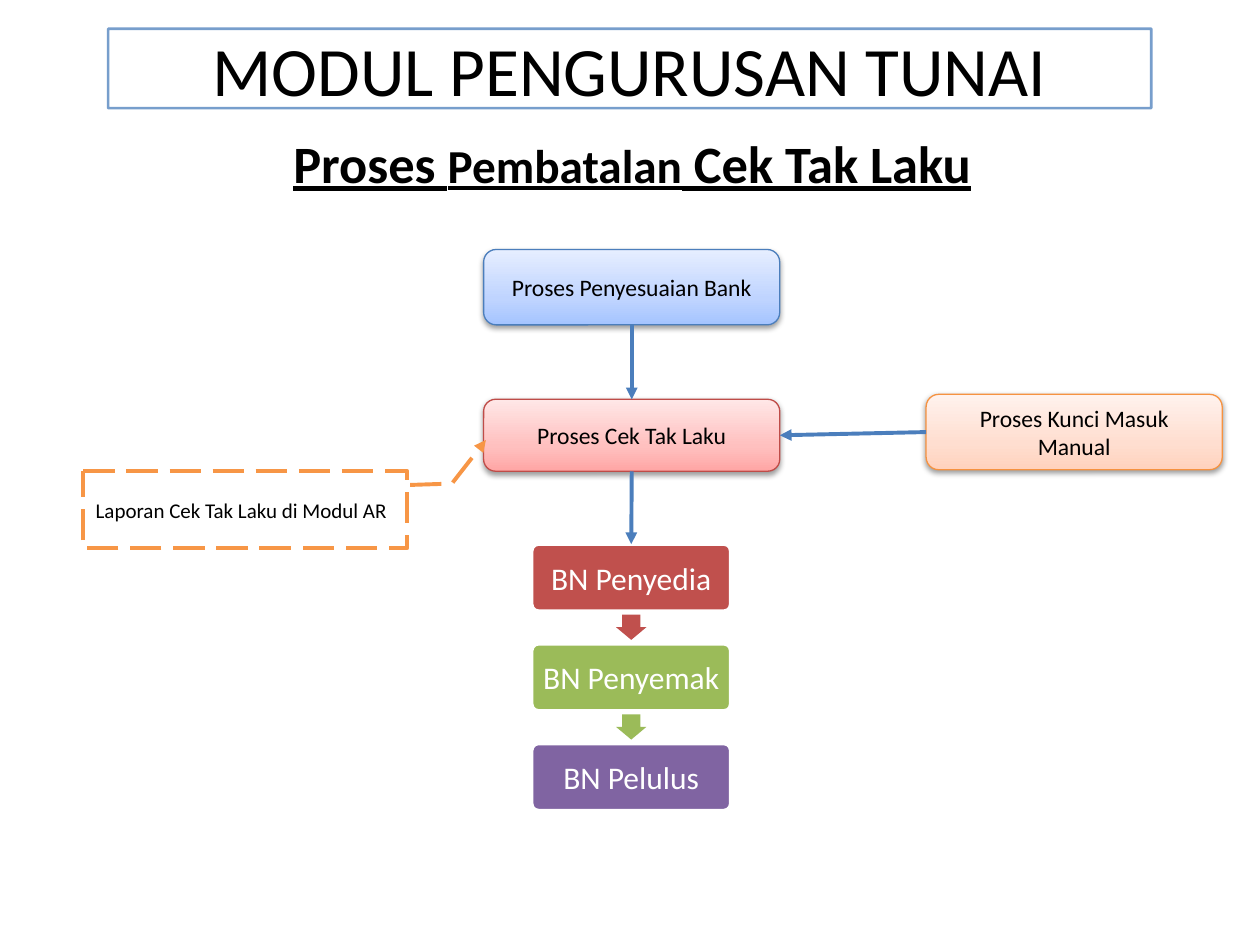
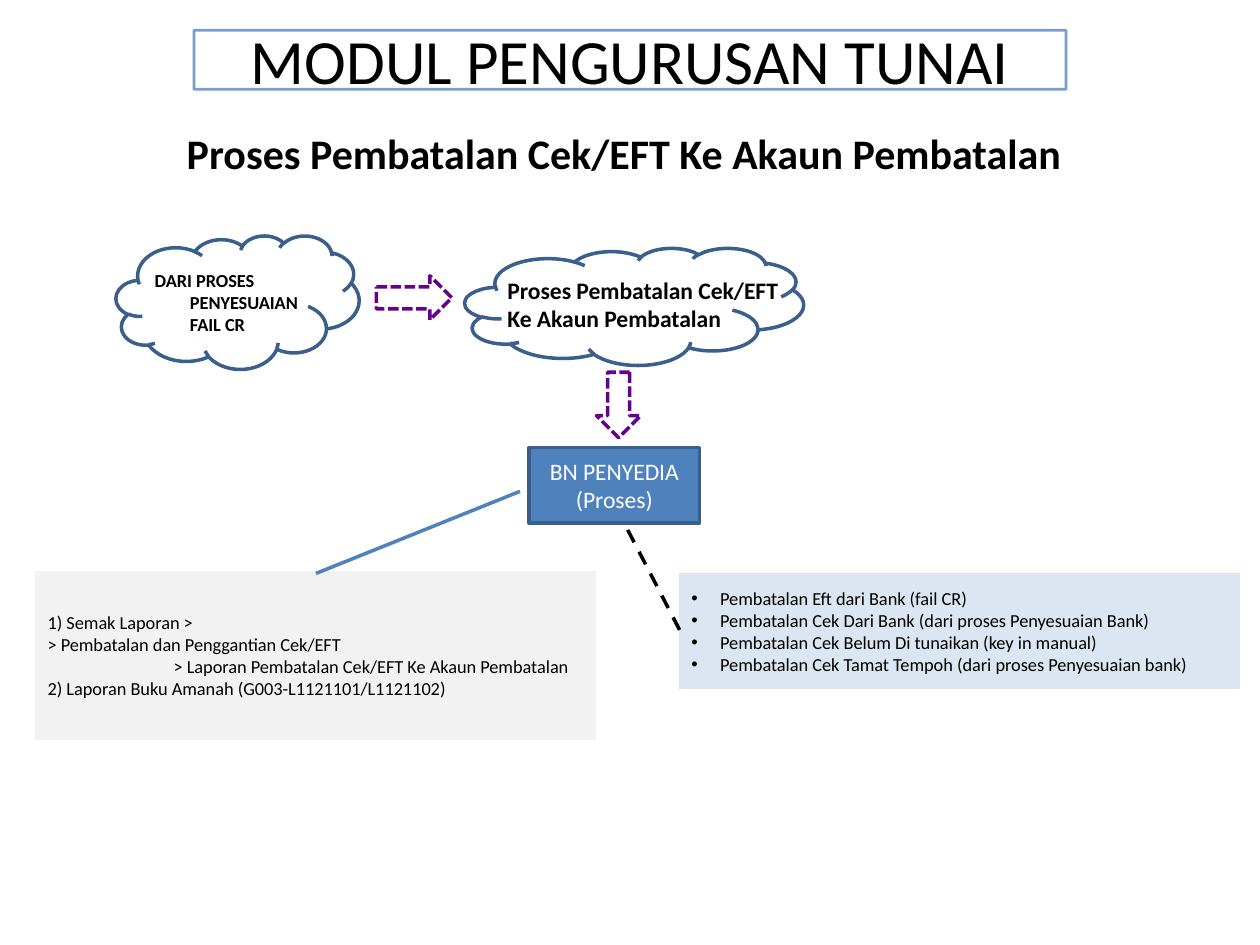
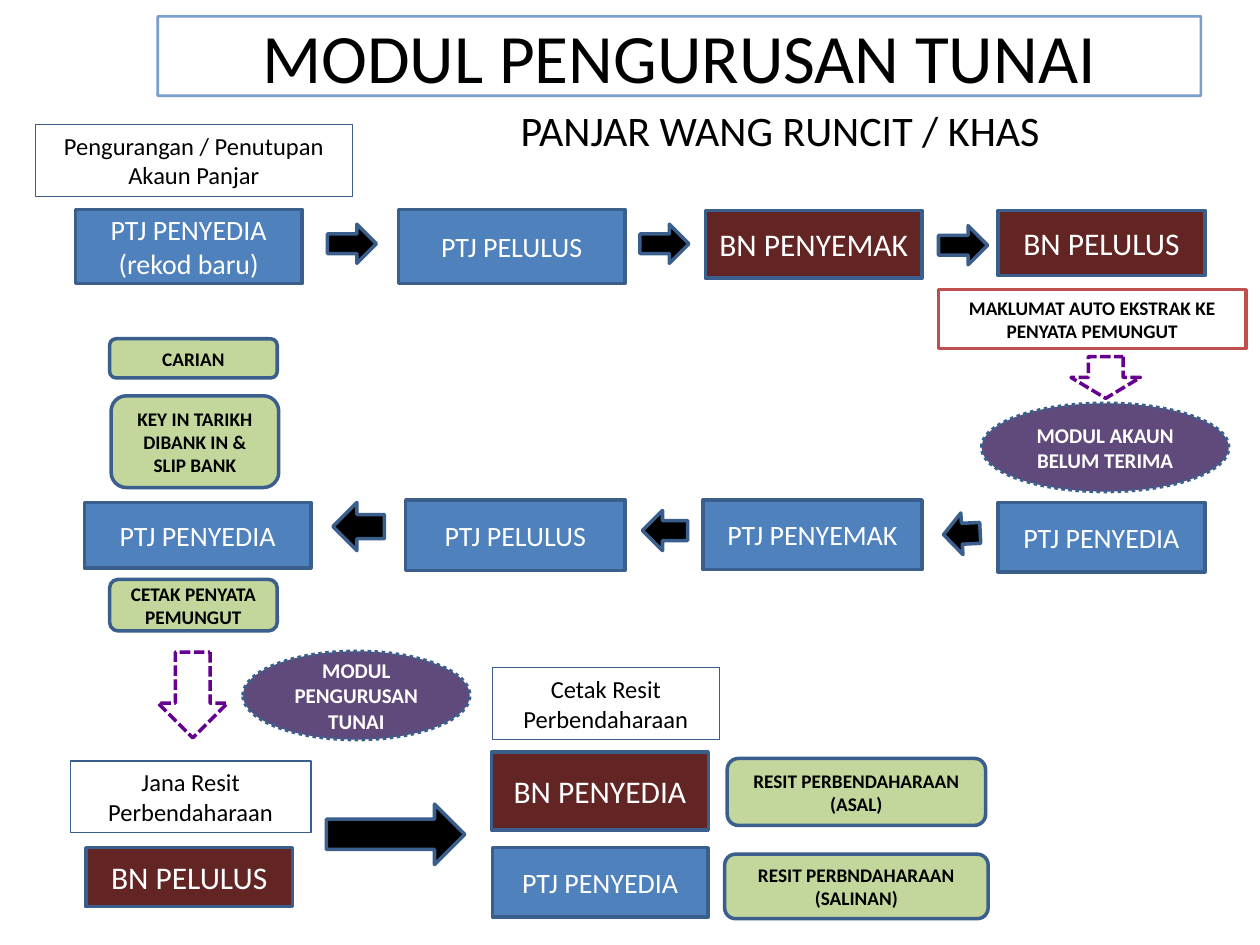
"""Build three slides on the cash management module."""

from dataclasses import dataclass
from typing import Any, Optional, Sequence

from lxml import etree
from copy import deepcopy
from pptx import Presentation
from pptx.dml.color import RGBColor
from pptx.enum.dml import MSO_LINE
from pptx.enum.shapes import MSO_CONNECTOR, MSO_SHAPE
from pptx.enum.text import MSO_ANCHOR, MSO_AUTO_SIZE, PP_ALIGN
from pptx.oxml.ns import qn
from pptx.util import Cm, Pt

RECT = MSO_SHAPE.RECTANGLE
ROUNDED = MSO_SHAPE.ROUNDED_RECTANGLE
OVAL = MSO_SHAPE.OVAL
CLOUD = MSO_SHAPE.CLOUD
ARROW = MSO_SHAPE.RIGHT_ARROW
BENT_CALLOUT = MSO_SHAPE.LINE_CALLOUT_2
PLAIN_CALLOUT = MSO_SHAPE.LINE_CALLOUT_1_NO_BORDER
STRAIGHT = MSO_CONNECTOR.STRAIGHT
DASH, LONG_DASH = MSO_LINE.DASH, MSO_LINE.LONG_DASH
SHORT_DASH, DOTS = MSO_LINE.SQUARE_DOT, MSO_LINE.ROUND_DOT
LEFT, CENTER = PP_ALIGN.LEFT, PP_ALIGN.CENTER
MIDDLE, TOP_ANCHOR = MSO_ANCHOR.MIDDLE, MSO_ANCHOR.TOP
NO_AUTOFIT = MSO_AUTO_SIZE.NONE
TOP, SIDE_LEFT, BOTTOM, SIDE_RIGHT = range(4)

BLACK = RGBColor(0x00, 0x00, 0x00)
WHITE = RGBColor(0xFF, 0xFF, 0xFF)
BLUE = RGBColor(0x4F, 0x81, 0xBD)
NAVY = RGBColor(0x3A, 0x5F, 0x8C)
LINK_BLUE = RGBColor(0x4B, 0x7E, 0xBC)
RED = RGBColor(0xC0, 0x50, 0x4D)
DARK_RED = RGBColor(0xBF, 0x4C, 0x48)
MAROON = RGBColor(0x63, 0x25, 0x23)
GREEN = RGBColor(0x9B, 0xBB, 0x59)
PALE_GREEN = RGBColor(0xC3, 0xD6, 0x9B)
PURPLE = RGBColor(0x80, 0x64, 0xA2)
DARK_PURPLE = RGBColor(0x60, 0x4A, 0x7B)
VIOLET = RGBColor(0x66, 0x00, 0x8F)
ORANGE = RGBColor(0xF7, 0x96, 0x46)
DEEP_ORANGE = RGBColor(0xF6, 0x92, 0x40)
PALE_BLUE = RGBColor(0xDC, 0xE6, 0xF2)
PALE_GREY = RGBColor(0xF2, 0xF2, 0xF2)
BLUE_BLEND = (RGBColor(0xA4, 0xC4, 0xFF), RGBColor(0xBF, 0xD4, 0xFF), RGBColor(0xE6, 0xEE, 0xFF))
RED_BLEND = (RGBColor(0xFF, 0xA6, 0xA5), RGBColor(0xFF, 0xC0, 0xBF), RGBColor(0xFF, 0xE7, 0xE7))
ORANGE_BLEND = (RGBColor(0xFF, 0xD2, 0xBD), RGBColor(0xFF, 0xDE, 0xD0), RGBColor(0xFF, 0xF2, 0xED))
BLEND_POSITIONS = (0, 0.35, 1)

FONT = "Calibri"
MODULE_TITLE = "MODUL PENGURUSAN TUNAI"


@dataclass(frozen=True)
class Box:
    """Position and size in centimetres, with a rotation in degrees."""

    left: float
    top: float
    width: float
    height: float
    turn: float = 0

    def lengths(self) -> tuple[Cm, Cm, Cm, Cm]:
        """Return the frame as lengths."""
        return Cm(self.left), Cm(self.top), Cm(self.width), Cm(self.height)


@dataclass(frozen=True)
class Style:
    """Look of a shape and of the text in it."""

    kind: Any
    fill: Optional[RGBColor] = None
    line: Optional[RGBColor] = NAVY
    weight: float = 2
    dash: Any = None
    size: float = 12
    color: RGBColor = BLACK
    bold: bool = False
    align: Any = CENTER
    blend: tuple[RGBColor, ...] = ()


@dataclass(frozen=True)
class Block:
    """One shape of a diagram."""

    style: Style
    box: Box
    text: str = ""
    adjust: tuple[float, ...] = ()


BANK = Style(ROUNDED, line=LINK_BLUE, weight=0.75, size=13.5, blend=BLUE_BLEND)
CHEQUE = Style(ROUNDED, line=DARK_RED, weight=0.75, size=13.5, blend=RED_BLEND)
MANUAL = Style(ROUNDED, line=DEEP_ORANGE, weight=0.75, size=13.5, blend=ORANGE_BLEND)
REPORT = Style(BENT_CALLOUT, WHITE, ORANGE, 2.25, LONG_DASH, align=LEFT)
CLOUD_OUTLINE = Style(CLOUD)
DASHED_ARROW = Style(ARROW, line=VIOLET, dash=SHORT_DASH)
PREPARER = Style(RECT, BLUE, size=13.5, color=WHITE)
SOURCES = Style(PLAIN_CALLOUT, PALE_BLUE, BLACK, dash=DASH, size=10.5, align=LEFT)
CHECKS = Style(PLAIN_CALLOUT, PALE_GREY, BLUE, size=10.5, align=LEFT)
PTJ = Style(RECT, BLUE, size=16, color=WHITE)
BN = Style(RECT, MAROON, size=18, color=WHITE)
STEP_ARROW = Style(ARROW, BLACK)
NOTE = Style(RECT, weight=0.75, size=14)
EXTRACT = Style(RECT, WHITE, RED, size=11, bold=True)
ACTION = Style(ROUNDED, PALE_GREEN, size=11, bold=True)
MODULE = Style(OVAL, DARK_PURPLE, dash=DOTS, color=WHITE, bold=True)

APPROVALS = (("BN Penyedia", RED), ("BN Penyemak", GREEN), ("BN Pelulus", PURPLE))
APPROVAL_TOP, APPROVAL_PITCH = 10.97, 2.01

CLOUD_FLOW = (
    Block(CLOUD_OUTLINE, Box(2.34, 4.75, 4.9, 2.69)),
    Block(PREPARER, Box(10.67, 9.02, 3.43, 1.52), "BN PENYEDIA\n(Proses)"),
    Block(DASHED_ARROW, Box(7.59, 5.56, 1.52, 0.89)),
    Block(DASHED_ARROW, Box(11.81, 7.72, 1.32, 0.89, 90)),
    Block(CLOUD_OUTLINE, Box(9.37, 5, 6.83, 2.36)),
)
SOURCE_LIST = Block(
    SOURCES,
    Box(13.69, 11.56, 11.3, 2.34),
    "Pembatalan Eft dari Bank (fail CR)\n"
    "Pembatalan Cek Dari Bank (dari proses Penyesuaian Bank)\n"
    "Pembatalan Cek Belum Di tunaikan (key in manual)\n"
    "Pembatalan Cek Tamat Tempoh (dari proses Penyesuaian bank)",
    (0.487, 0.001, -0.415, -0.096),
)
CHECK_LIST = Block(
    CHECKS,
    Box(0.71, 11.51, 11.3, 3.4),
    "1) Semak Laporan >\n"
    "> Pembatalan dan Penggantian Cek/EFT\n"
    "> Laporan Pembatalan Cek/EFT Ke Akaun Pembatalan\n"
    "2) Laporan Buku Amanah (G003-L1121101/L1121102)",
    (0.015, 0.501, -0.472, 0.865),
)

PETTY_CASH_FLOW = (
    Block(NOTE, Box(0.71, 2.51, 6.4, 1.45), "Pengurangan / Penutupan\nAkaun Panjar"),
    Block(PTJ, Box(1.52, 4.22, 4.57, 1.5), "PTJ PENYEDIA\n(rekod baru)"),
    Block(STEP_ARROW, Box(6.6, 4.52, 0.99, 0.79)),
    Block(PTJ, Box(8.03, 4.22, 4.57, 1.5), "PTJ PELULUS"),
    Block(STEP_ARROW, Box(12.9, 4.52, 0.99, 0.79)),
    Block(BN, Box(14.22, 4.24, 4.37, 1.37), "BN PENYEMAK"),
    Block(STEP_ARROW, Box(18.92, 4.55, 0.99, 0.79)),
    Block(BN, Box(20.12, 4.24, 4.17, 1.32), "BN PELULUS"),
    Block(EXTRACT, Box(18.92, 5.84, 6.2, 1.19), "MAKLUMAT AUTO EKSTRAK KE PENYATA PEMUNGUT"),
    Block(DASHED_ARROW, Box(21.87, 6.91, 0.84, 1.4, 90)),
    Block(MODULE, Box(19.79, 8.13, 4.98, 1.78), "MODUL AKAUN BELUM TERIMA"),
    Block(PTJ, Box(20.12, 10.13, 4.17, 1.4), "PTJ PENYEDIA"),
    Block(STEP_ARROW, Box(19.02, 10.34, 0.74, 0.84, 177.2)),
    Block(PTJ, Box(14.17, 10.08, 4.42, 1.4), "PTJ PENYEMAK"),
    Block(STEP_ARROW, Box(12.95, 10.29, 0.91, 0.81, 180)),
    Block(PTJ, Box(8.18, 10.08, 4.42, 1.42), "PTJ PELULUS"),
    Block(STEP_ARROW, Box(6.71, 10.13, 1.04, 0.97, 180)),
    Block(PTJ, Box(1.7, 10.13, 4.57, 1.32), "PTJ PENYEDIA"),
    Block(ACTION, Box(2.21, 6.83, 3.38, 0.79), "CARIAN"),
    Block(ACTION, Box(2.24, 7.98, 3.38, 1.85), "KEY IN TARIKH DIBANK IN & SLIP BANK"),
    Block(ACTION, Box(2.21, 11.68, 3.38, 1.04), "CETAK PENYATA PEMUNGUT"),
    Block(DASHED_ARROW, Box(3.02, 13.31, 1.73, 1.4, 90)),
    Block(MODULE, Box(4.9, 13.13, 4.57, 1.78), "MODUL PENGURUSAN TUNAI"),
    Block(NOTE, Box(1.42, 15.34, 4.85, 1.45), "Jana Resit Perbendaharaan"),
    Block(BN, Box(1.73, 17.09, 4.17, 1.19), "BN PELULUS"),
    Block(STEP_ARROW, Box(6.58, 16.21, 2.79, 1.22)),
    Block(NOTE, Box(9.93, 13.46, 4.57, 1.45), "Cetak Resit Perbendaharaan"),
    Block(BN, Box(9.91, 15.16, 4.37, 1.57), "BN PENYEDIA"),
    Block(PTJ, Box(9.93, 17.09, 4.34, 1.4), "PTJ PENYEDIA"),
    Block(ACTION, Box(14.66, 15.29, 5.21, 1.35), "RESIT PERBENDAHARAAN (ASAL)"),
    Block(ACTION, Box(14.61, 17.22, 5.31, 1.3), "RESIT PERBNDAHARAAN (SALINAN)"),
)


def apply(target: Any, values: dict[str, Any]) -> None:
    """Set each format value on the target."""
    for attribute, value in values.items():
        setattr(target, attribute, value)


def add_run(paragraph: Any, text: str, size: float, color: RGBColor = BLACK, **extra: Any) -> None:
    """Add a formatted run to a paragraph."""
    run = paragraph.add_run()
    run.text = text
    apply(run.font, {"name": FONT, "size": Pt(size), **extra})
    run.font.color.rgb = color


def write(frame: Any, text: str, size: float, color: RGBColor, bold: bool, align: Any) -> None:
    """Write one paragraph for each line of text."""
    apply(frame, {"word_wrap": True, "auto_size": NO_AUTOFIT})
    for index, line in enumerate(text.split("\n")):
        paragraph = frame.add_paragraph() if index else frame.paragraphs[0]
        paragraph.alignment = align
        add_run(paragraph, line, size, color, bold=bold)


def indent(paragraph: Any, left: float, first: float = 0, bullet: str = "") -> None:
    """Indent a paragraph and give it a bullet if one is named."""
    properties = paragraph._p.get_or_add_pPr()
    properties.set("marL", str(Cm(left)))
    properties.set("indent", str(Cm(first)))
    if bullet:
        etree.SubElement(properties, qn("a:buFont"), typeface="Arial")
        etree.SubElement(properties, qn("a:buChar"), char=bullet)


def blend_fill(shape: Any, colors: Sequence[RGBColor]) -> None:
    """Fill a shape with an upward gradient and a soft shadow."""
    shape.fill.gradient()
    shape.fill.gradient_angle = 90
    stops = next(shape._element.spPr.iter(qn("a:gsLst")))
    stops.insert(1, deepcopy(stops[0]))
    for stop, color, position in zip(shape.fill.gradient_stops, colors, BLEND_POSITIONS):
        stop.color.rgb = color
        stop.position = position
    effects = shape._element.spPr.find(qn("a:effectLst"))
    shadow = etree.SubElement(
        effects, qn("a:outerShdw"), blurRad="40000", dist="20000", dir="5400000", rotWithShape="0"
    )
    tint = etree.SubElement(shadow, qn("a:srgbClr"), val=str(BLACK))
    etree.SubElement(tint, qn("a:alpha"), val="38000")


def draw(slide: Any, block: Block) -> Any:
    """Draw a block and return its shape."""
    style = block.style
    shape = slide.shapes.add_shape(style.kind, *block.box.lengths())
    shape.rotation = block.box.turn
    shape.shadow.inherit = False
    for index, value in enumerate(block.adjust):
        shape.adjustments[index] = value
    if style.blend:
        blend_fill(shape, style.blend)
    elif style.fill is None:
        shape.fill.background()
    else:
        shape.fill.solid()
        shape.fill.fore_color.rgb = style.fill
    if style.line is None:
        shape.line.fill.background()
    else:
        shape.line.color.rgb = style.line
        apply(shape.line, {"width": Pt(style.weight), "dash_style": style.dash})
    if block.text:
        shape.text_frame.vertical_anchor = MIDDLE
        write(shape.text_frame, block.text, style.size, style.color, style.bold, style.align)
    return shape


def add_arrowhead(line_owner: Any) -> None:
    """Put a triangle at the end of a line."""
    outline = line_owner._element.spPr.find(qn("a:ln"))
    etree.SubElement(outline, qn("a:tailEnd"), type="triangle")


def link(slide: Any, start: Any, start_side: int, end: Any, end_side: int) -> None:
    """Join two shapes with an arrow."""
    arrow = slide.shapes.add_connector(STRAIGHT, 0, 0, 0, 0)
    arrow.begin_connect(start, start_side)
    arrow.end_connect(end, end_side)
    arrow.line.color.rgb = LINK_BLUE
    arrow.line.width = Pt(2.25)
    add_arrowhead(arrow)
    etree.SubElement(arrow._element.spPr, qn("a:effectLst"))


def place(shape: Any, box: Box) -> None:
    """Move and size a shape."""
    apply(shape, dict(zip(("left", "top", "width", "height"), box.lengths())))


def add_slide(
    deck: Any,
    title_box: Box,
    title_size: float,
    heading_box: Box,
    heading: Sequence[tuple[str, float]],
    align: Any = LEFT,
    **heading_format: Any,
) -> Any:
    """Add a slide with its framed module title and its heading."""
    slide = deck.slides.add_slide(deck.slide_layouts[0])
    title, subtitle = slide.placeholders
    place(title, title_box)
    title.line.color.rgb = BLUE
    title.line.width = Pt(1.5)
    tint = next(title._element.spPr.iter(qn("a:srgbClr")))
    etree.SubElement(tint, qn("a:alpha"), val="76000")
    title.text_frame.vertical_anchor = MIDDLE
    write(title.text_frame, MODULE_TITLE, title_size, BLACK, False, CENTER)
    place(subtitle, heading_box)
    apply(
        subtitle.text_frame,
        {"word_wrap": True, "auto_size": NO_AUTOFIT, "vertical_anchor": TOP_ANCHOR},
    )
    paragraph = subtitle.text_frame.paragraphs[0]
    apply(paragraph, {"alignment": align, "space_before": Pt(0)})
    for text, size in heading:
        add_run(paragraph, text, size, **heading_format)
    return slide


def add_label(slide: Any, box: Box, text: str, size: float, left: float, first: float) -> None:
    """Add a bold indented label over a cloud."""
    label = slide.shapes.add_textbox(*box.lengths())
    write(label.text_frame, text, size, BLACK, True, LEFT)
    indent(label.text_frame.paragraphs[0], left, first)


def build_stale_cheques(deck: Any) -> None:
    """Build the slide on cancelling stale cheques."""
    slide = add_slide(
        deck,
        Box(2.18, 0.58, 21.03, 1.6),
        39.6,
        Box(2.24, 2.51, 21.01, 1.47),
        (("Proses ", 30), ("Pembatalan", 27), (" Cek Tak Laku", 30)),
        CENTER,
        bold=True,
        underline=True,
    )
    bank = draw(slide, Block(BANK, Box(9.75, 5.03, 5.97, 1.52), "Proses Penyesuaian Bank"))
    cheque = draw(slide, Block(CHEQUE, Box(9.75, 8.05, 5.97, 1.45), "Proses Cek Tak Laku"))
    manual = draw(slide, Block(MANUAL, Box(18.67, 7.95, 5.97, 1.52), "Proses Kunci Masuk Manual"))
    approvals = []
    for index, (role, color) in enumerate(APPROVALS):
        top = APPROVAL_TOP + index * APPROVAL_PITCH
        card = Style(ROUNDED, color, WHITE, size=18, color=WHITE)
        approval = draw(slide, Block(card, Box(10.72, top, 4.01, 1.35), role, (0.1,)))
        apply(approval.text_frame, {"margin_left": Cm(0.18), "margin_right": Cm(0.18)})
        approvals.append(approval)
        if index < len(APPROVALS) - 1:
            pointer = Style(ARROW, color, line=None)
            draw(slide, Block(pointer, Box(12.47, top + 1.37, 0.51, 0.61, 90), adjust=(0.6, 0.5)))
    link(slide, bank, BOTTOM, cheque, TOP)
    link(slide, cheque, BOTTOM, approvals[0], TOP)
    link(slide, manual, SIDE_LEFT, cheque, SIDE_RIGHT)
    report = Block(
        REPORT,
        Box(1.68, 9.5, 6.53, 1.55),
        "Laporan Cek Tak Laku di Modul AR",
        (0.179, 1.009, 0.161, 1.138, -0.406, 1.243),
    )
    add_arrowhead(draw(slide, report))


def build_cancellation_account(deck: Any) -> None:
    """Build the slide on moving cancelled payments to their account."""
    slide = add_slide(
        deck,
        Box(3.91, 0.61, 17.58, 1.19),
        36,
        Box(3.51, 2.44, 19.41, 1.27),
        (("Proses Pembatalan Cek/EFT Ke Akaun Pembatalan", 24),),
        bold=True,
    )
    for block in CLOUD_FLOW:
        draw(slide, block)
    add_label(slide, Box(2.87, 5.31, 4.06, 1.6), "DARI PROSES PENYESUAIAN FAIL CR", 10.5, 0.71, -0.71)
    add_label(
        slide,
        Box(9.27, 5.44, 6.83, 1.42),
        "Proses Pembatalan Cek/EFT Ke Akaun Pembatalan",
        13.5,
        0.71,
        0,
    )
    sources = draw(slide, SOURCE_LIST)
    for paragraph in sources.text_frame.paragraphs:
        indent(paragraph, 0.58, -0.58, "•")
    checks = draw(slide, CHECK_LIST)
    indent(checks.text_frame.paragraphs[2], 2.54)


def build_petty_cash(deck: Any) -> None:
    """Build the slide on petty cash."""
    slide = add_slide(
        deck,
        Box(3.18, 0.33, 21.03, 1.6),
        39.6,
        Box(10.24, 1.98, 11.66, 1.27),
        (("PANJAR WANG RUNCIT / KHAS", 24),),
    )
    for block in PETTY_CASH_FLOW:
        draw(slide, block)


def main() -> None:
    """Build and save the deck."""
    deck = Presentation()
    apply(deck, {"slide_width": Cm(25.4), "slide_height": Cm(19.05)})
    for build in (build_stale_cheques, build_cancellation_account, build_petty_cash):
        build(deck)
    deck.save("out.pptx")


if __name__ == "__main__":
    main()
